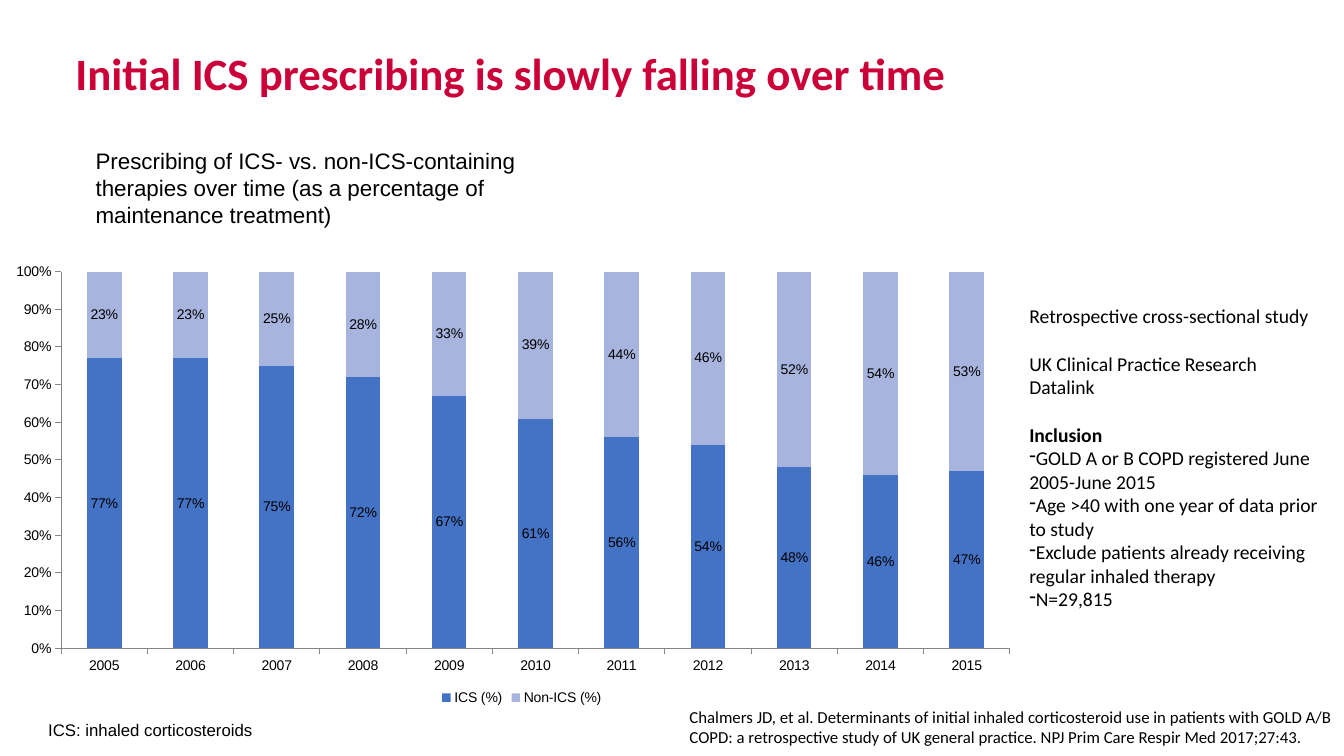
from lxml import etree
from pptx import Presentation
from pptx.chart.data import CategoryChartData
from pptx.dml.color import RGBColor as RGB
from pptx.enum.chart import (XL_CHART_TYPE as Kind, XL_LABEL_POSITION as Spot,
                             XL_LEGEND_POSITION as Side, XL_TICK_MARK as Tick)
from pptx.enum.text import MSO_ANCHOR as Anchor
from pptx.oxml import parse_xml
from pptx.oxml.ns import nsdecls, qn
from pptx.util import Inches, Pt

# Content
TITLE = "Initial ICS prescribing is slowly falling over time"
LEAD = ("Prescribing of ICS- vs. non-ICS-containing therapies over time "
        "(as a percentage of maintenance treatment)")
ABBR = "ICS: inhaled corticosteroids"
CITE = ("Chalmers JD, et al. Determinants of initial inhaled corticosteroid use in "
        "patients with GOLD A/B COPD: a retrospective study of UK general practice. "
        "NPJ Prim Care Respir Med 2017;27:43.")
STUDY = ["Retrospective cross-sectional study",
         "UK Clinical Practice Research Datalink",
         "Inclusion"]
RULES = ["GOLD A or B COPD registered June 2005-June 2015",
         "Age >40 with one year of data prior to study",
         "Exclude patients already receiving regular inhaled therapy",
         "N=29,815"]
YEARS = [str(year) for year in range(2005, 2016)]
SHARES = {
    "ICS (%)": [.77, .77, .75, .72, .67, .61, .56, .54, .48, .46, .47],
    "Non-ICS (%)": [.23, .23, .25, .28, .33, .39, .44, .46, .52, .54, .53],
}
PLOT = {"x": 0.049, "y": 0.043, "w": 0.929, "h": 0.823}


class Theme:
    red = RGB(0xCB, 0x00, 0x38)
    black = RGB(0, 0, 0)
    axis = RGB(0x86, 0x86, 0x86)
    bars = [RGB(0x44, 0x72, 0xC4), RGB(0xA7, 0xB4, 0xDD)]
    sans, body = "Arial", "Calibri"
    title, lead, side, note, chart = Pt(32), Pt(16), Pt(14), Pt(12), Pt(10)
    gap = Pt(17)


def style(font, face, size, color=Theme.black, bold=False):
    font.name, font.size, font.bold = face, size, bold
    font.color.rgb = color


def add_box(slide, area, lines, face, size, color=Theme.black, bold=False, wrap=True):
    frame = slide.shapes.add_textbox(*map(Inches, area)).text_frame
    frame.word_wrap = wrap
    for i, line in enumerate(lines):
        para = frame.paragraphs[0] if i == 0 else frame.add_paragraph()
        para.text = line
        style(para.font, face, size, color, bold)
    return frame


def add_dash(para):
    props = para._p.get_or_add_pPr()
    props.set("marL", "0")
    props.set("indent", "0")
    bullet = parse_xml(f'<a:buChar {nsdecls("a")} char="-"/>')
    props.insert(0, bullet)


def set_plot(chart):
    area = chart._chartSpace.chart.plotArea
    for old in area.findall(qn("c:layout")):
        area.remove(old)
    layout = etree.Element(qn("c:layout"))
    manual = etree.SubElement(layout, qn("c:manualLayout"))
    parts = {"layoutTarget": "inner", "xMode": "edge", "yMode": "edge", **PLOT}
    for name, val in parts.items():
        etree.SubElement(manual, qn(f"c:{name}")).set("val", str(val))
    area.insert(0, layout)


def add_bars(slide):
    data = CategoryChartData(number_format="0%")
    data.categories = YEARS
    for name, vals in SHARES.items():
        data.add_series(name, vals)
    area = map(Inches, (0.11, 2.5, 10.13, 4.54))
    chart = slide.shapes.add_chart(Kind.COLUMN_STACKED_100, *area, data).chart
    style(chart.font, Theme.sans, Theme.chart)
    chart.has_title = False
    set_plot(chart)

    # Bars and labels
    plot = chart.plots[0]
    plot.gap_width, plot.overlap = 150, 100
    plot.vary_by_categories = False
    for series, color in zip(plot.series, Theme.bars):
        series.format.fill.solid()
        series.format.fill.fore_color.rgb = color
        labels = series.data_labels
        labels.show_value = True
        labels.number_format, labels.number_format_is_linked = "0%", False
        labels.position = Spot.CENTER

    # Axes and legend
    for axis in (chart.category_axis, chart.value_axis):
        axis.has_major_gridlines = False
        axis.major_tick_mark, axis.minor_tick_mark = Tick.OUTSIDE, Tick.NONE
        axis.format.line.color.rgb = Theme.axis
        axis.format.line.width = Pt(0.75)
    scale = chart.value_axis
    scale.minimum_scale, scale.maximum_scale, scale.major_unit = 0, 1, 0.1
    scale.tick_labels.number_format = "0%"
    scale.tick_labels.number_format_is_linked = False
    chart.has_legend = True
    chart.legend.position = Side.BOTTOM
    chart.legend.include_in_layout = False


def main():
    deck = Presentation()
    deck.slide_width, deck.slide_height = Inches(13.33), Inches(7.5)
    slide = deck.slides.add_slide(deck.slide_layouts[6])

    # Title
    head = add_box(slide, (0.65, 0.13, 9.85, 1.25), [TITLE],
                   Theme.body, Theme.title, Theme.red, bold=True)
    head.vertical_anchor = Anchor.MIDDLE
    head.paragraphs[0].line_spacing = 0.9

    # Chart with its lead and notes
    add_bars(slide)
    add_box(slide, (0.85, 1.41, 5, 0.91), [LEAD], Theme.sans, Theme.lead)
    add_box(slide, (0.38, 7.09, 2.24, 0.3), [ABBR], Theme.sans, Theme.note, wrap=False)
    add_box(slide, (6.74, 6.96, 6.73, 0.5), [CITE], Theme.body, Theme.note)

    # Study details
    side = add_box(slide, (10.11, 2.97, 3.12, 3.16), STUDY + RULES,
                   Theme.body, Theme.side)
    paras = side.paragraphs
    count = len(STUDY)
    for para in paras[1:count]:
        para.space_before = Theme.gap
    paras[count - 1].font.bold = True
    for para in paras[count:]:
        add_dash(para)

    deck.save("out.pptx")


if __name__ == "__main__":
    main()
